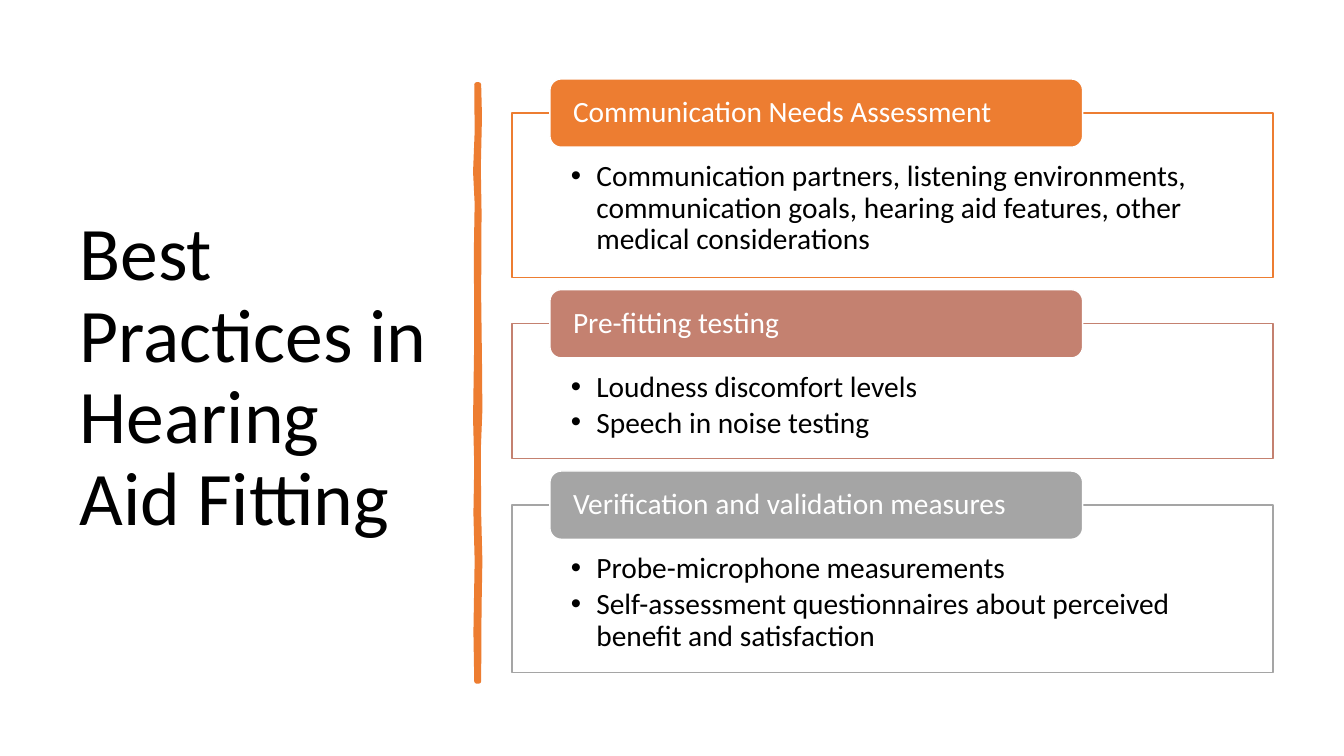
from lxml import etree
from pptx import Presentation
from pptx import util as u
from pptx.dml.color import RGBColor
from pptx.enum import shapes, text
from pptx.oxml import ns

ORANGE = RGBColor(0xED, 0x7D, 0x31)
ROSE = RGBColor(0xC4, 0x81, 0x70)
GRAY = RGBColor(0xA5, 0xA5, 0xA5)
WHITE = RGBColor(0xFF, 0xFF, 0xFF)
BLACK = RGBColor(0, 0, 0)
FONT = "Calibri"

SECTIONS = [
    ("Communication Needs Assessment", ORANGE, 4.14, [
        "Communication partners, listening environments, communication goals, "
        "hearing aid features, other medical considerations"]),
    ("Pre-fitting testing", ROSE, 3.4, [
        "Loudness discomfort levels",
        "Speech in noise testing"]),
    ("Verification and validation measures", GRAY, 4.22, [
        "Probe-microphone measurements",
        "Self-assessment questionnaires about perceived benefit and satisfaction"]),
]
SECTION_GAP = 1.17
TAB_HEIGHT = 1.72

BRUSH_RIGHT = [(0.03, 0), (0.05, 0.8), (0.02, 2.1), (0.04, 3.2), (0.03, 5.3),
               (0.05, 7), (0.06, 8.2), (0.02, 9.2), (0.03, 10.8), (0.06, 12),
               (0.04, 13.2), (0.03, 15.04)]
BRUSH_LEFT = [(-0.03, 15.04), (-0.05, 13.8), (-0.02, 12), (-0.05, 10.8),
              (-0.03, 9.6), (-0.06, 8.4), (-0.03, 6.4), (-0.04, 4.2),
              (-0.02, 3), (-0.06, 2.2), (-0.02, 1.2), (-0.03, 0)]


def add_bullet(para, indent):
    properties = para._p.get_or_add_pPr()
    properties.set("marL", str(u.Cm(indent)))
    properties.set("indent", str(-u.Cm(indent)))
    for tag, name, value in (("a:buFont", "typeface", "Arial"),
                             ("a:buChar", "char", "•")):
        etree.SubElement(properties, ns.qn(tag)).set(name, value)


def write_text(shape, lines, size, color, anchor, margins=None,
               bullet_indent=None, after=0):
    frame = shape.text_frame
    frame.word_wrap = True
    frame.auto_size = text.MSO_AUTO_SIZE.NONE
    frame.vertical_anchor = anchor
    if margins:
        (frame.margin_left, frame.margin_top,
         frame.margin_right, frame.margin_bottom) = map(u.Cm, margins)
    for index, line in enumerate(lines):
        para = frame.add_paragraph() if index else frame.paragraphs[0]
        para.alignment = text.PP_ALIGN.LEFT
        para.line_spacing = 0.9
        para.space_before = u.Pt(0)
        para.space_after = u.Pt(after)
        if bullet_indent:
            add_bullet(para, bullet_indent)
        span = para.add_run()
        span.text = line
        span.font.name = FONT
        span.font.size = u.Pt(size)
        span.font.color.rgb = color


def paint(shape, fill, line, width):
    shape.shadow.inherit = False
    shape.fill.solid()
    shape.fill.fore_color.rgb = fill
    shape.line.color.rgb = line
    shape.line.width = u.Pt(width)


def add_title(page, left, top, width, height):
    title = page.shapes.title
    title.left, title.top = u.Cm(left), u.Cm(top)
    title.width, title.height = u.Cm(width), u.Cm(height)
    write_text(title, ["Best Practices in Hearing Aid Fitting"], size=54,
               color=BLACK, anchor=text.MSO_ANCHOR.MIDDLE)


def add_brush_line(page, center, top):
    points = [(u.Cm(center + offset), u.Cm(top + drop))
              for offset, drop in BRUSH_RIGHT + BRUSH_LEFT]
    builder = page.shapes.build_freeform(*points[0])
    builder.add_line_segments(points[1:], close=True)
    paint(builder.convert_to_shape(), ORANGE, ORANGE, 3.25)


def add_section(page, left, top, width, height, heading, color, bullets):
    frame = page.shapes.add_shape(
        shapes.MSO_SHAPE.RECTANGLE,
        u.Cm(left), u.Cm(top), u.Cm(width), u.Cm(height))
    paint(frame, WHITE, color, 1)
    write_text(frame, bullets, size=21, color=BLACK,
               anchor=text.MSO_ANCHOR.TOP, margins=(1.49, 1.21, 1.49, 0.4),
               bullet_indent=0.64, after=3)
    tab = page.shapes.add_shape(
        shapes.MSO_SHAPE.ROUNDED_RECTANGLE,
        u.Cm(left + width * 0.05), u.Cm(top - TAB_HEIGHT / 2),
        u.Cm(width * 0.7), u.Cm(TAB_HEIGHT))
    paint(tab, color, WHITE, 1)
    write_text(tab, [heading], size=21, color=WHITE,
               anchor=text.MSO_ANCHOR.MIDDLE, margins=(0.5, 0, 0.5, 0))


def add_sections(page, left, top, width):
    for heading, color, height, bullets in SECTIONS:
        add_section(page, left, top, width, height, heading, color, bullets)
        top += height + SECTION_GAP


def main():
    deck = Presentation()
    deck.slide_width, deck.slide_height = u.Cm(33.87), u.Cm(19.05)
    page = deck.slides.add_slide(deck.slide_layouts[5])
    add_title(page, 1.75, 1.78, 9.5, 15.52)
    add_brush_line(page, 12.04, 2.13)
    add_sections(page, 12.9, 2.85, 19.18)
    deck.save("out.pptx")


if __name__ == "__main__":
    main()
